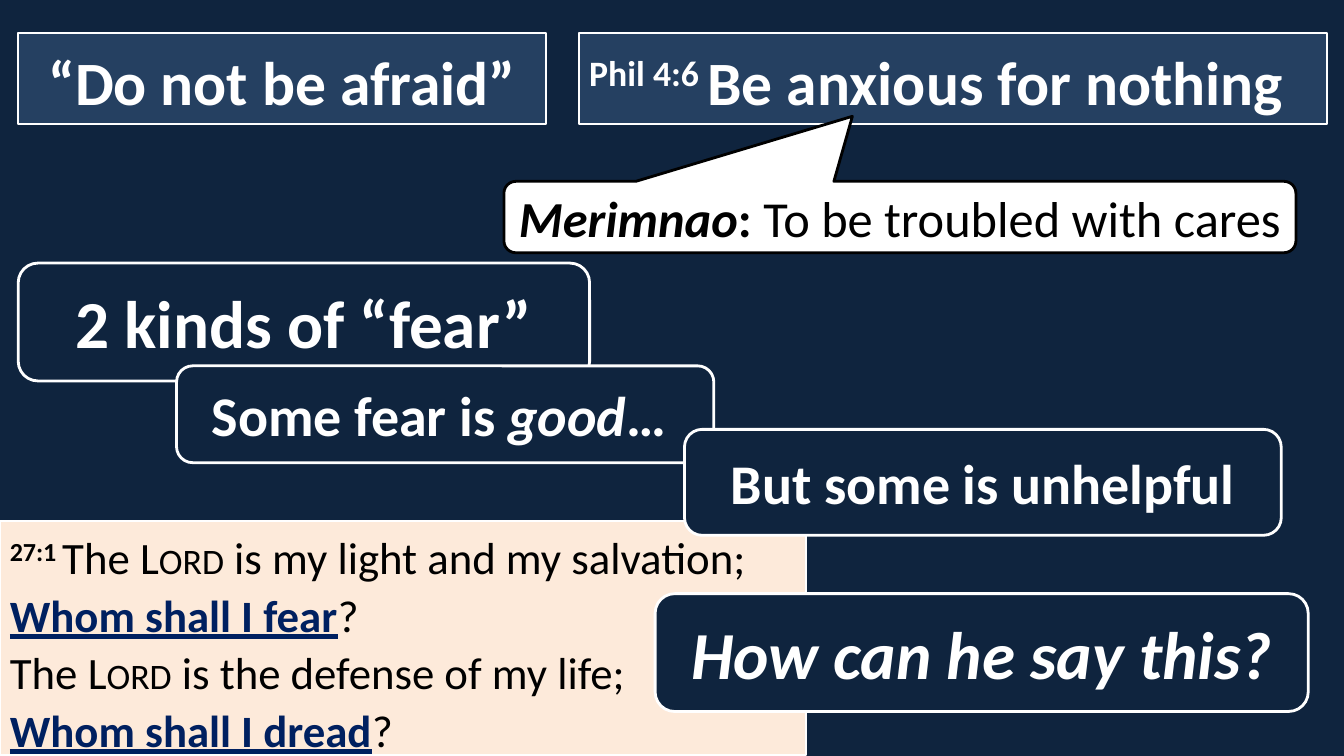
from pptx import Presentation
from pptx.dml.color import RGBColor
from pptx.enum.shapes import MSO_SHAPE
from pptx.enum.text import MSO_ANCHOR, PP_ALIGN
from pptx.util import Cm, Pt

RECT = MSO_SHAPE.RECTANGLE
ROUNDED = MSO_SHAPE.ROUNDED_RECTANGLE
CALLOUT = MSO_SHAPE.ROUNDED_RECTANGULAR_CALLOUT
TOP, MIDDLE = MSO_ANCHOR.TOP, MSO_ANCHOR.MIDDLE
LEFT, CENTER = PP_ALIGN.LEFT, PP_ALIGN.CENTER

COLORS = {
    "navy": "0F243E",
    "banner": "254061",
    "verse": "FDEADA",
    "emphasis": "002060",
    "white": "FFFFFF",
    "black": "000000",
}

VERSE_LINES = [
    [("27:1 ", "bold super"), ("The ", ""), ("Lord", "caps"),
     (" is my light and my salvation;", "")],
    [("Whom shall I fear", "bold key"), ("?", "")],
    [("The ", ""), ("Lord", "caps"), (" is the defense of my life;", "")],
    [("Whom shall I dread", "bold key"), ("?", "")],
]


def rgb(name):
    return RGBColor.from_string(COLORS[name])


class Slide:
    font = "Calibri"

    def __init__(self, prs):
        self.s = prs.slides.add_slide(prs.slide_layouts[6])
        fill = self.s.background.fill
        fill.solid()
        fill.fore_color.rgb = rgb("navy")

    def shape(self, kind, box, fill, line, width):
        sp = self.s.shapes.add_shape(kind, *[Cm(v) for v in box])
        sp.shadow.inherit = False
        sp.fill.solid()
        sp.fill.fore_color.rgb = rgb(fill)
        sp.line.color.rgb = rgb(line)
        sp.line.width = Pt(width)
        return sp

    def text(self, sp, lines, size, color, anchor=MIDDLE, align=CENTER, spacing=1.0):
        """Fill a shape with one paragraph; each line is a list of (text, styles)."""
        tf = sp.text_frame
        tf.word_wrap = True
        tf.vertical_anchor = anchor
        p = tf.paragraphs[0]
        p.alignment = align
        p.line_spacing = spacing
        p.font.name = self.font
        p.font.size = Pt(size)
        for i, line in enumerate(lines):
            if i:
                p.add_line_break()
            for words, styles in line:
                self.run(p, words, styles.split(), color)

    def run(self, p, words, styles, color):
        r = p.add_run()
        r.text = words
        r.font.bold = "bold" in styles
        r.font.italic = "italic" in styles
        r.font.underline = "key" in styles
        r.font.color.rgb = rgb("emphasis" if "key" in styles else color)
        if "super" in styles:
            r.font._element.set("baseline", "30000")
        if "caps" in styles:
            r.font._element.set("cap", "small")

    def verse(self, box, lines):
        sp = self.shape(RECT, box, "verse", "white", 1.5)
        self.text(sp, lines, 32, "black", TOP, LEFT, 1.07)

    def banner(self, box, runs, align):
        sp = self.shape(RECT, box, "banner", "white", 1.5)
        self.text(sp, [runs], 44, "white", TOP, align, 1.07)

    def card(self, box, runs, size):
        sp = self.shape(ROUNDED, box, "navy", "white", 2)
        self.text(sp, [runs], size, "white")

    def callout(self, box, runs, tip):
        sp = self.shape(CALLOUT, box, "white", "black", 2)
        sp.adjustments[0], sp.adjustments[1] = tip
        self.text(sp, [runs], 36, "black")


def main():
    prs = Presentation()
    prs.slide_width, prs.slide_height = Cm(33.87), Cm(19.05)
    s = Slide(prs)
    s.verse((0, 13.13, 20.32, 5.89), VERSE_LINES)
    s.card((16.51, 14.96, 16.46, 2.97), [("How can he say this?", "bold italic")], 48)
    s.banner((14.6, 0.84, 18.85, 2.29),
             [("Phil 4:6 ", "bold super"), ("Be anxious for nothing", "bold")], LEFT)
    s.banner((0.46, 0.84, 13.31, 2.29), [("“Do not be afraid”", "bold")], CENTER)
    s.card((0.46, 6.63, 14.4, 2.97), [("2 kinds of “fear”", "bold")], 48)
    s.card((4.45, 9.22, 13.54, 2.44),
           [("Some fear is ", "bold"), ("good", "bold italic"), ("… ", "bold")], 40)
    s.callout((12.7, 4.57, 19.96, 1.8),
              [("Merimnao", "bold italic"), (":", "bold"),
               (" To be troubled with cares", "")], (-0.06, -1.41))
    s.card((17.25, 10.82, 15.04, 2.67), [("But some is unhelpful", "bold")], 40)
    prs.save("out.pptx")


if __name__ == "__main__":
    main()
